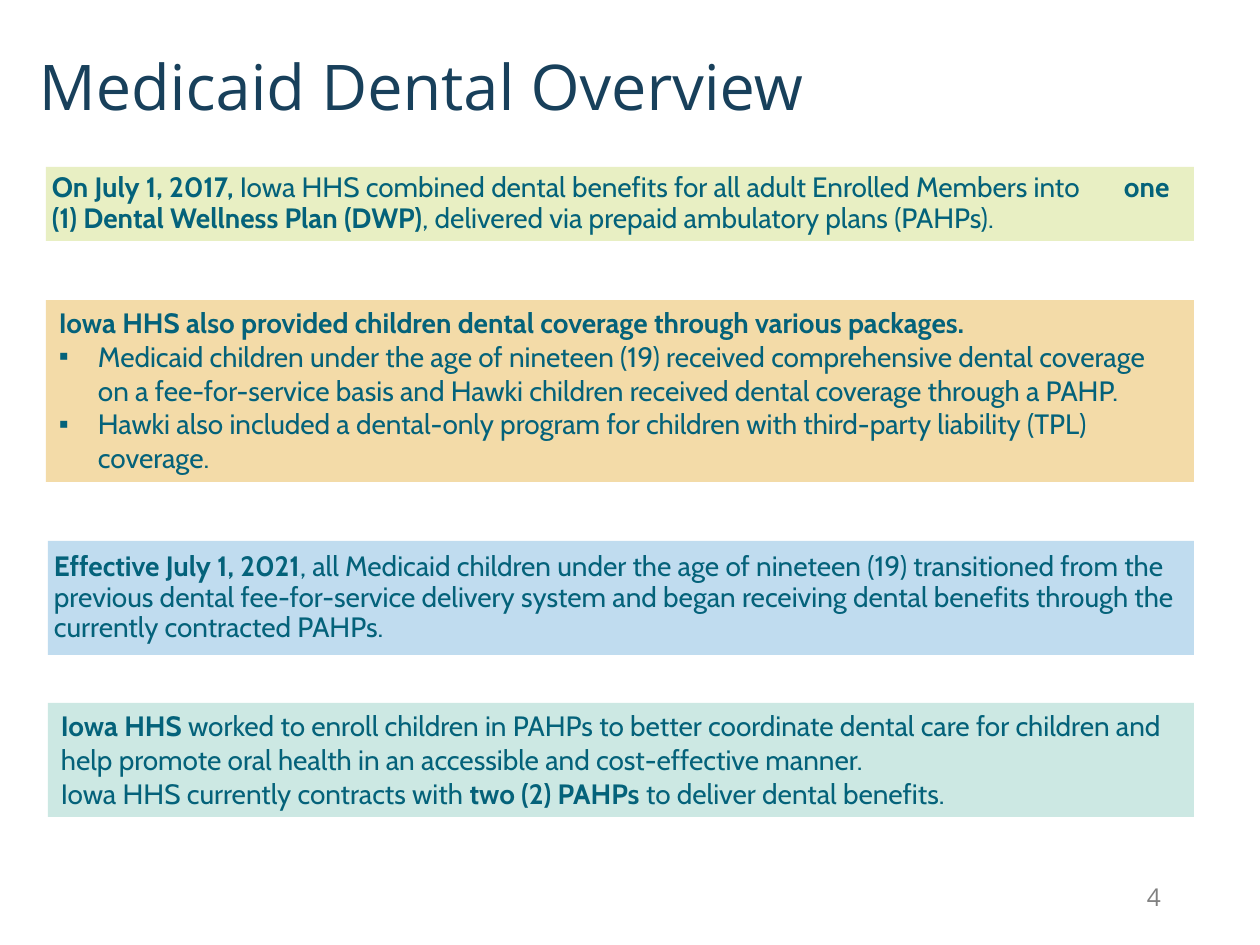
"""Build the Medicaid dental overview slide."""
from lxml import etree
from pptx import Presentation, util as u
from pptx.dml.color import RGBColor
from pptx.enum import shapes, text
from pptx.oxml.ns import qn

EMU_PER_PX = 914400 / 126
DEFAULT_INSETS = (13, 6, 13, 6)
TIGHT_INSETS = (6, 8, 14, 8)


def px(length):
    return u.Emu(round(length * EMU_PER_PX))


def color(hex_code):
    return RGBColor.from_string(hex_code)


class Deck:
    heading_font, body_font = "Open Sans", "Cabin"
    navy, teal, gray = "18405B", "04627A", "808080"

    def __init__(self):
        self.prs = Presentation()
        self.prs.slide_width, self.prs.slide_height = px(1260), px(945)
        self.slide = self.prs.slides.add_slide(self.prs.slide_layouts[1])

    def place(self, shape, box):
        shape.left, shape.top, shape.width, shape.height = map(px, box)

    def frame(self, shape, insets=DEFAULT_INSETS, anchor=text.MSO_ANCHOR.TOP):
        tf = shape.text_frame
        tf.word_wrap = True
        tf.auto_size = text.MSO_AUTO_SIZE.NONE
        tf.vertical_anchor = anchor
        tf.margin_left, tf.margin_top, tf.margin_right, tf.margin_bottom = map(px, insets)
        return tf

    def style(self, paragraph, font, size, hex_code, align=text.PP_ALIGN.LEFT, spacing=1.0):
        paragraph.alignment = align
        paragraph.line_spacing = spacing
        paragraph.font.name = font
        paragraph.font.size = u.Pt(size)
        paragraph.font.color.rgb = color(hex_code)

    def bullet(self, paragraph, char, indent):
        props = paragraph._p.get_or_add_pPr()
        props.set("marL", str(px(indent)))
        props.set("indent", str(-px(indent)))
        if char:
            etree.SubElement(props, qn("a:buFont"), typeface="Arial")
            etree.SubElement(props, qn("a:buChar"), char=char)
        else:
            etree.SubElement(props, qn("a:buNone"))

    def tab_stop(self, paragraph, position):
        tabs = etree.SubElement(paragraph._p.get_or_add_pPr(), qn("a:tabLst"))
        etree.SubElement(tabs, qn("a:tab"), pos=str(px(position)), algn="l")

    def title(self, words, box):
        heading = self.slide.shapes.title
        self.place(heading, box)
        tf = self.frame(heading, anchor=text.MSO_ANCHOR.MIDDLE)
        tf.text = words
        self.style(tf.paragraphs[0], self.heading_font, 36, self.navy, spacing=0.8)

    def bullets(self, lead, items, box, fill):
        packages = self.slide.placeholders[1]
        self.place(packages, box)
        packages.fill.solid()
        packages.fill.fore_color.rgb = color(fill)
        tf = self.frame(packages)
        tf.text = "\n".join([lead, *items])
        for i, paragraph in enumerate(tf.paragraphs):
            self.bullet(paragraph, "▪" if i else None, 39 if i else 0)
            paragraph.space_before = u.Pt(0)
            self.style(paragraph, self.body_font, 16, self.teal)
            paragraph.font.bold = i == 0

    def panel(self, paragraphs, box, fill, insets=DEFAULT_INSETS,
              anchor=text.MSO_ANCHOR.TOP, spacing=1.0, tab=None):
        band = self.slide.shapes.add_shape(shapes.MSO_SHAPE.RECTANGLE, *map(px, box))
        band.shadow.inherit = False
        band.fill.solid()
        band.fill.fore_color.rgb = color(fill)
        band.line.fill.background()
        tf = self.frame(band, insets, anchor)
        for i, runs in enumerate(paragraphs):
            paragraph = tf.add_paragraph() if i else tf.paragraphs[0]
            if tab:
                self.tab_stop(paragraph, tab)
            self.style(paragraph, self.body_font, 16, self.teal, spacing=spacing)
            for words, bold in runs:
                run = paragraph.add_run()
                run.text = words
                run.font.bold = bold

    def page_number(self, number, box):
        tf = self.frame(self.slide.shapes.add_textbox(*map(px, box)))
        tf.text = number
        self.style(tf.paragraphs[0], self.heading_font, 14, self.gray, text.PP_ALIGN.RIGHT)


def main():
    deck = Deck()
    dated = dict(insets=TIGHT_INSETS, anchor=text.MSO_ANCHOR.MIDDLE, spacing=0.9)
    deck.title("Medicaid Dental Overview", (26, 55, 1167, 74))
    deck.panel([[
        ("On July 1, 2017, ", True),
        ("Iowa HHS combined dental benefits for all adult Enrolled Members into\t", False),
        ("one (1) Dental Wellness Plan (DWP)", True),
        (", delivered via prepaid ambulatory plans (PAHPs).", False),
    ]], (46, 167, 1148, 74), "E8EFC3", tab=1072, **dated)
    deck.bullets(
        "Iowa HHS also provided children dental coverage through various packages.",
        ["Medicaid children under the age of nineteen (19) received comprehensive dental coverage "
         "on a fee-for-service basis and Hawki children received dental coverage through a PAHP.",
         "Hawki also included a dental-only program for children with third-party liability (TPL) "
         "coverage."],
        (46, 300, 1148, 182), "F3DBA8")
    deck.panel([[
        ("Effective July 1, 2021", True),
        (", all Medicaid children under the age of nineteen (19) transitioned from the previous "
         "dental fee-for-service delivery system and began receiving dental benefits through the "
         "currently contracted PAHPs.", False),
    ]], (48, 541, 1146, 114), "C0DCEF", **dated)
    deck.panel([
        [("Iowa HHS ", True),
         ("worked to enroll children in PAHPs to better coordinate dental care for children and "
          "help promote oral health in an accessible and cost-effective manner.", False)],
        [("Iowa HHS currently contracts with ", False),
         ("two (2) PAHPs ", True),
         ("to deliver dental benefits.", False)],
    ], (48, 703, 1146, 114), "CCE8E3")
    deck.page_number("4", (890, 876, 284, 50))
    deck.prs.save("out.pptx")


if __name__ == "__main__":
    main()
